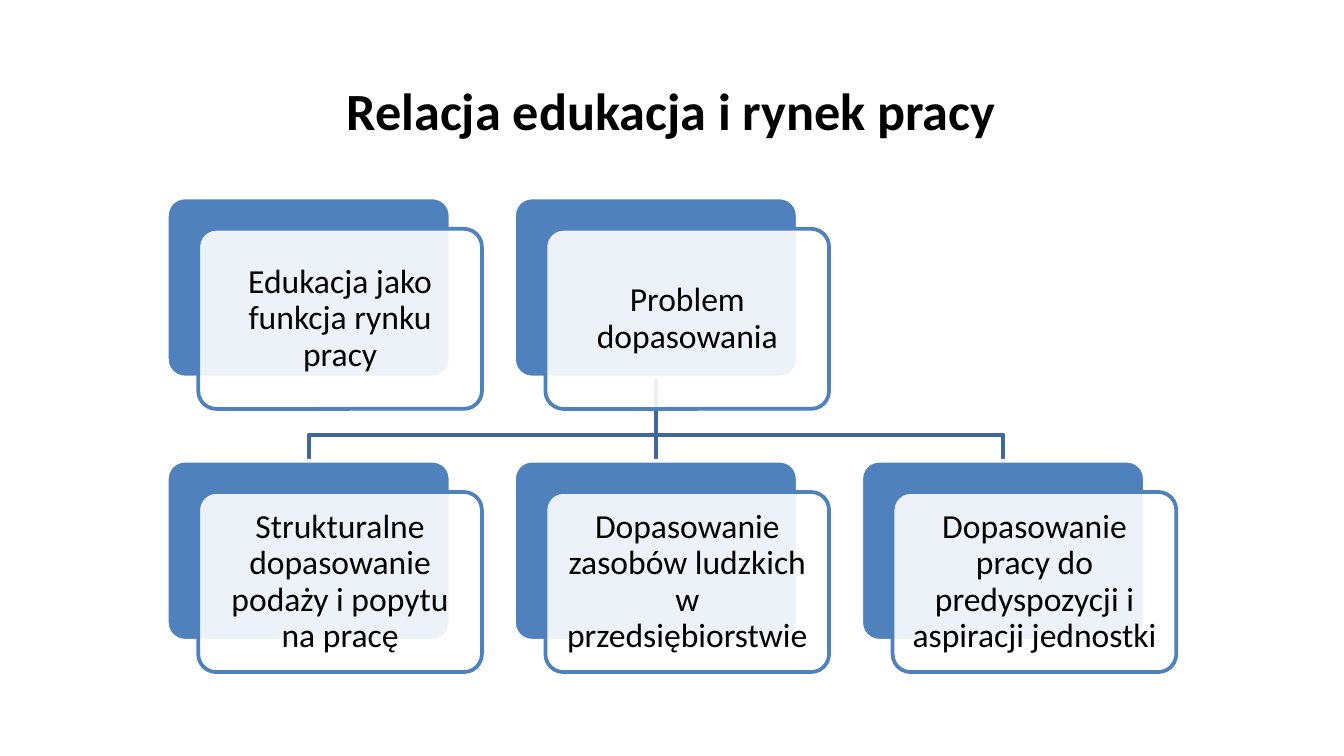
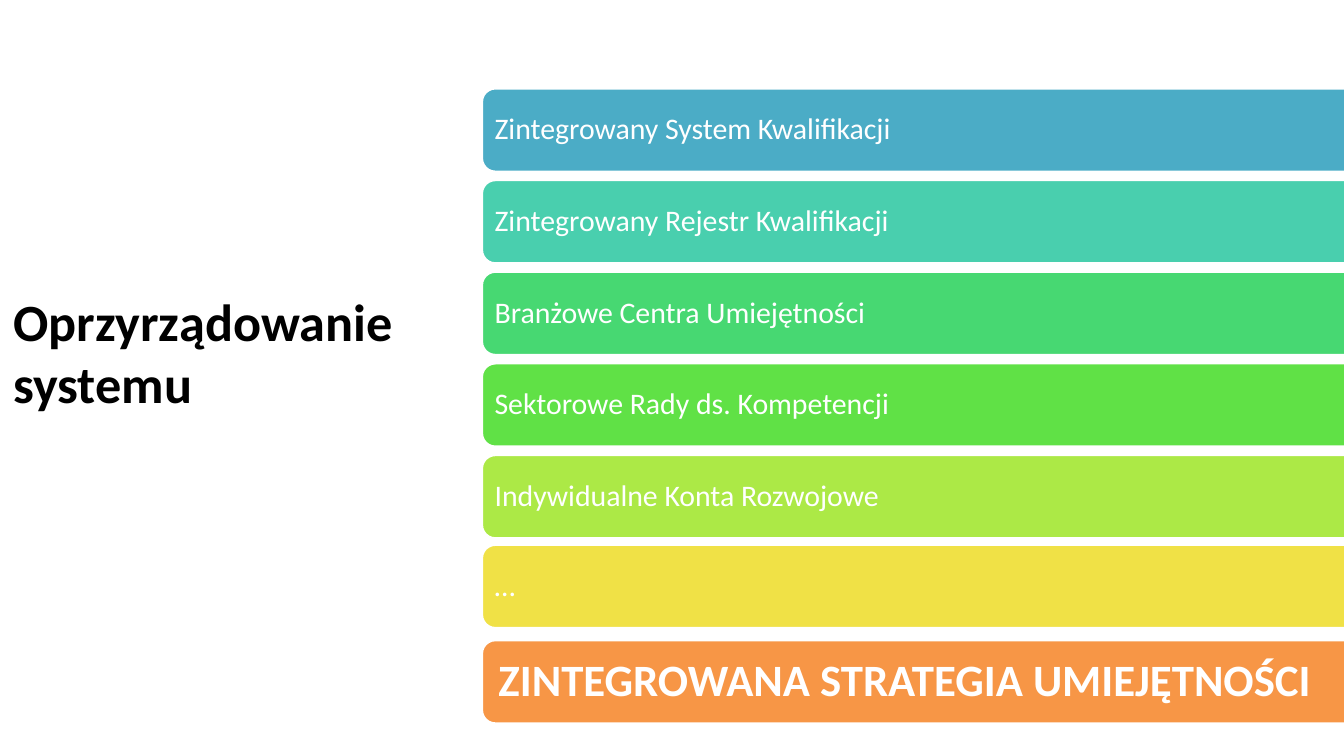
from dataclasses import dataclass

from lxml import etree
from pptx import Presentation
from pptx.dml.color import RGBColor
from pptx.enum.shapes import MSO_CONNECTOR, MSO_SHAPE
from pptx.enum.text import MSO_ANCHOR, MSO_AUTO_SIZE, PP_ALIGN
from pptx.oxml.ns import qn
from pptx.shapes.autoshape import Shape
from pptx.shapes.connector import Connector
from pptx.slide import Slide
from pptx.util import Pt

ROUNDED = MSO_SHAPE.ROUNDED_RECTANGLE
STRAIGHT = MSO_CONNECTOR.STRAIGHT
TOP, MIDDLE = MSO_ANCHOR.TOP, MSO_ANCHOR.MIDDLE
LEFT, CENTER = PP_ALIGN.LEFT, PP_ALIGN.CENTER
GROW, FIXED = MSO_AUTO_SIZE.SHAPE_TO_FIT_TEXT, MSO_AUTO_SIZE.NONE
SIDE_TOP, SIDE_BOTTOM = 0, 2

FONT = "Calibri"
LINE_WIDTH = 2
COLORS = {
    "black": "000000",
    "white": "FFFFFF",
    "blue": "4F81BD",
    "branch": "3F6797",
    "sea": "4BACC6",
    "teal": "49CFAE",
    "emerald": "47D872",
    "green": "60E146",
    "lime": "ACE946",
    "yellow": "F0E146",
    "orange": "F79646",
}


@dataclass(frozen=True)
class Box:
    left: float
    top: float
    width: float
    height: float

    def points(self) -> list[int]:
        return [Pt(v) for v in (self.left, self.top, self.width, self.height)]

    def inset(self, gap: float) -> "Box":
        return Box(self.left + gap, self.top + gap, self.width - 2 * gap, self.height - 2 * gap)

    def shifted(self, offset: float) -> "Box":
        return Box(self.left + offset, self.top + offset, self.width, self.height)

    def center(self) -> float:
        return self.left + self.width / 2


@dataclass(frozen=True)
class TextStyle:
    size: float
    color: str
    bold: bool = False
    align: PP_ALIGN = LEFT
    anchor: MSO_ANCHOR = MIDDLE
    auto_size: MSO_AUTO_SIZE = FIXED
    spacing: float = 0.9
    margin_x: float = 5
    margin_y: float = 5


@dataclass(frozen=True)
class Card:
    text: str
    column: int
    row: int

    def box(self) -> Box:
        return Box(89.4 + 186 * self.column, 105.8 + 141 * self.row, 152, 96.5)


@dataclass(frozen=True)
class Bar:
    text: str
    color: str
    style: TextStyle
    nudge: float = 0


TITLE = TextStyle(28, "black", bold=True, anchor=TOP, auto_size=GROW,
                  spacing=1, margin_x=7.2, margin_y=3.6)
CARD_TEXT = TextStyle(18, "black", align=CENTER)
BAR_TEXT = TextStyle(16, "white")
STRATEGY_TEXT = TextStyle(24, "white", bold=True, margin_x=7.2, margin_y=7.2)

EDUCATION = Card("Edukacja jako funkcja rynku pracy", 0, 0)
PROBLEM = Card("Problem dopasowania", 1, 0)
STRUCTURE = Card("Strukturalne dopasowanie podaży i popytu na pracę", 0, 1)
RESOURCES = Card("Dopasowanie zasobów ludzkich w przedsiębiorstwie", 1, 1)
ASPIRATIONS = Card("Dopasowanie pracy do predyspozycji i aspiracji jednostki", 2, 1)
CARDS = [EDUCATION, PROBLEM, STRUCTURE, RESOURCES, ASPIRATIONS]

BARS = [
    Bar("Zintegrowany System Kwalifikacji", "sea", BAR_TEXT),
    Bar("Zintegrowany Rejestr Kwalifikacji", "teal", BAR_TEXT),
    Bar("Branżowe Centra Umiejętności", "emerald", BAR_TEXT),
    Bar("Sektorowe Rady ds. Kompetencji", "green", BAR_TEXT),
    Bar("Indywidualne Konta Rozwojowe", "lime", BAR_TEXT),
    Bar("…", "yellow", BAR_TEXT, nudge=-1),
    Bar("ZINTEGROWANA STRATEGIA UMIEJĘTNOŚCI", "orange", STRATEGY_TEXT, nudge=1),
]


def rgb(color: str) -> RGBColor:
    return RGBColor.from_string(COLORS[color])


def apply(target: object, values: dict[str, object]) -> None:
    for attribute, value in values.items():
        setattr(target, attribute, value)


def outline(shape: Shape | Connector, color: str) -> None:
    shape.line.color.rgb = rgb(color)
    shape.line.width = Pt(LINE_WIDTH)


def add_text(slide: Slide, box: Box, text: str, style: TextStyle) -> None:
    frame = slide.shapes.add_textbox(*box.points()).text_frame
    apply(frame, {
        "word_wrap": True,
        "auto_size": style.auto_size,
        "vertical_anchor": style.anchor,
        "margin_left": Pt(style.margin_x),
        "margin_right": Pt(style.margin_x),
        "margin_top": Pt(style.margin_y),
        "margin_bottom": Pt(style.margin_y),
    })
    paragraph = frame.paragraphs[0]
    apply(paragraph, {"alignment": style.align, "line_spacing": style.spacing})
    run = paragraph.add_run()
    run.text = text
    apply(run.font, {"name": FONT, "size": Pt(style.size), "bold": style.bold})
    run.font.color.rgb = rgb(style.color)


def add_panel(slide: Slide, box: Box, fill: str, line: str,
              rounding: float | None = None, opacity: int = 100) -> Shape:
    panel = slide.shapes.add_shape(ROUNDED, *box.points())
    panel.shadow.inherit = False
    panel.fill.solid()
    panel.fill.fore_color.rgb = rgb(fill)
    outline(panel, line)
    if rounding is not None:
        panel.adjustments[0] = rounding
    if opacity < 100:
        fill_color = panel.fill._xPr.find(qn("a:solidFill"))[0]
        etree.SubElement(fill_color, qn("a:alpha"), val=str(opacity * 1000))
    return panel


def add_card(slide: Slide, card: Card) -> Shape:
    back = add_panel(slide, card.box(), "blue", "white", rounding=0.1)
    front = card.box().shifted(16.8)
    add_panel(slide, front, "white", "blue", rounding=0.1, opacity=90)
    add_text(slide, front.inset(2.8), card.text, CARD_TEXT)
    return back


def add_elbow(slide: Slide, parent: Box, child: Box) -> None:
    start = parent.center(), parent.top + parent.height
    bend = child.top - 13.8
    builder = slide.shapes.build_freeform(*map(Pt, start))
    corners = [(start[0], bend), (child.center(), bend), (child.center(), child.top)]
    builder.add_line_segments([(Pt(x), Pt(y)) for x, y in corners], close=False)
    elbow = builder.convert_to_shape()
    elbow.shadow.inherit = False
    elbow.fill.background()
    outline(elbow, "branch")


def add_stem(slide: Slide, parent: Box, child: Box) -> Connector:
    stem = slide.shapes.add_connector(
        STRAIGHT, Pt(parent.center()), Pt(parent.top + parent.height),
        Pt(child.center()), Pt(child.top))
    outline(stem, "branch")
    etree.SubElement(stem._element.spPr, qn("a:effectLst"))
    return stem


def build_relation(slide: Slide) -> None:
    add_elbow(slide, PROBLEM.box(), ASPIRATIONS.box())
    stem = add_stem(slide, PROBLEM.box(), RESOURCES.box())
    add_elbow(slide, PROBLEM.box(), STRUCTURE.box())
    backs = {card: add_card(slide, card) for card in CARDS}
    stem.begin_connect(backs[PROBLEM], SIDE_BOTTOM)
    stem.end_connect(backs[RESOURCES], SIDE_TOP)
    add_text(slide, Box(178.6, 38.2, 430.6, 41), "Relacja edukacja i rynek pracy", TITLE)


def build_tools(slide: Slide) -> None:
    for index, bar in enumerate(BARS):
        box = Box(257.8, 47 + 49.1 * index + bar.nudge, 522.7, 45.4)
        add_panel(slide, box, bar.color, "white")
        add_text(slide, box.inset(2.2), bar.text, bar.style)
    add_text(slide, Box(0, 151.2, 284.4, 74.9), "Oprzyrządowanie systemu", TITLE)


def main() -> None:
    deck = Presentation()
    apply(deck, {"slide_width": Pt(720), "slide_height": Pt(405)})
    blank = deck.slide_layouts[6]
    for build in (build_relation, build_tools):
        build(deck.slides.add_slide(blank))
    deck.save("out.pptx")


if __name__ == "__main__":
    main()
